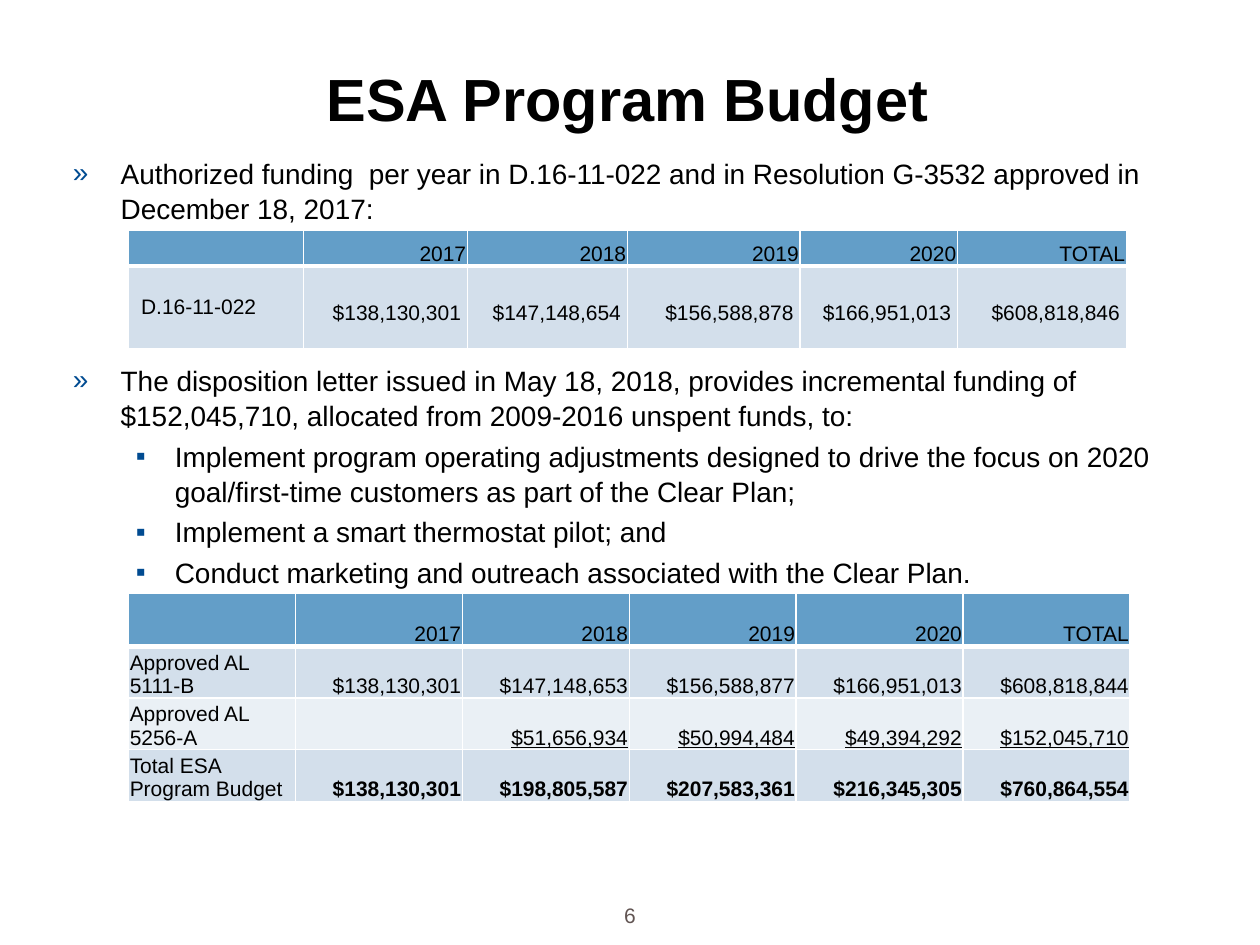
from lxml import etree
from pptx import Presentation
from pptx.dml.color import RGBColor
from pptx.enum.text import MSO_ANCHOR, PP_ALIGN
from pptx.oxml.ns import qn
from pptx.util import Inches, Pt

LEFT, CENTER, RIGHT = PP_ALIGN.LEFT, PP_ALIGN.CENTER, PP_ALIGN.RIGHT
MIDDLE, BOTTOM = MSO_ANCHOR.MIDDLE, MSO_ANCHOR.BOTTOM
TITLE_ONLY = 5
BLACK, WHITE, GRAY, NAVY = "000000", "FFFFFF", "615452", "004B91"
HEADER, BAND, PALE = "639EC8", "D3DFEB", "EAF0F5"

YEARS = ["", "2017", "2018", "2019", "2020", "TOTAL"]
AUTHORIZED = [
    YEARS,
    ["D.16-11-022", "$138,130,301", "$147,148,654", "$156,588,878",
     "$166,951,013", "$608,818,846"],
]
ALLOCATED = [
    YEARS,
    ["Approved AL 5111-B", "$138,130,301", "$147,148,653", "$156,588,877",
     "$166,951,013", "$608,818,844"],
    ["Approved AL 5256-A", "", "$51,656,934", "$50,994,484",
     "$49,394,292", "$152,045,710"],
    ["Total ESA Program Budget", "$138,130,301", "$198,805,587",
     "$207,583,361", "$216,345,305", "$760,864,554"],
]
BULLETS = [
    (0, 0, "Authorized funding  per year in D.16-11-022 and in Resolution "
           "G-3532 approved in December 18, 2017:"),
    (0, 78, "The disposition letter issued in May 18, 2018, provides incremental "
            "funding of $152,045,710, allocated from 2009-2016 unspent funds, to:"),
    (1, 3, "Implement program operating adjustments designed to drive the focus "
           "on 2020 goal/first-time customers as part of the Clear Plan;"),
    (1, 3, "Implement a smart thermostat pilot; and"),
    (1, 3, "Conduct marketing and outreach associated with the Clear Plan."),
]
BULLET_STYLES = [("»", 0.38, 0.38), ("▪", 0.81, 0.31)]


def color(value):
    return RGBColor.from_string(value)


def style(para, size, align=LEFT, fill=BLACK, bold=False, underline=False):
    para.alignment = align
    font = para.font
    font.name, font.size, font.bold = "Arial", Pt(size), bold
    font.underline = underline
    font.color.rgb = color(fill)


def add_bullet(para, symbol, margin, hanging):
    props = para._p.get_or_add_pPr()
    props.set("marL", str(Inches(margin)))
    props.set("indent", str(-Inches(hanging)))
    tint = etree.SubElement(props, qn("a:buClr"))
    etree.SubElement(tint, qn("a:srgbClr"), val=NAVY)
    etree.SubElement(props, qn("a:buFont"), typeface="Arial")
    etree.SubElement(props, qn("a:buChar"), char=symbol)


def place_title(page, box, text):
    title = page.shapes.title
    title.left, title.top, title.width, title.height = map(Inches, box)
    title.text_frame.text = text
    title.text_frame.vertical_anchor = MIDDLE
    style(title.text_frame.paragraphs[0], 34, CENTER, bold=True)


def place_bullets(page, box, bullets):
    frame = page.shapes.add_textbox(*map(Inches, box)).text_frame
    frame.word_wrap = True
    for index, (level, gap, text) in enumerate(bullets):
        para = frame.add_paragraph() if index else frame.paragraphs[0]
        para.text = text
        para.level = level
        para.line_spacing = 1.05
        if gap:
            para.space_before = Pt(gap)
        add_bullet(para, *BULLET_STYLES[level])
        style(para, 16)


def place_page_number(page, box, number):
    frame = page.shapes.add_textbox(*map(Inches, box)).text_frame
    frame.word_wrap = True
    frame.vertical_anchor = MIDDLE
    frame.text = number
    style(frame.paragraphs[0], 12, CENTER, GRAY)


def set_borders(cell, top, bottom):
    props = cell._tc.get_or_add_tcPr()
    for side, points in zip("LRTB", (1, 1, top, bottom)):
        line = etree.SubElement(props, qn(f"a:ln{side}"), w=str(Pt(points)))
        solid = etree.SubElement(line, qn("a:solidFill"))
        etree.SubElement(solid, qn("a:srgbClr"), val=WHITE)


def set_margins(cell, left, right, bottom):
    cell.margin_left, cell.margin_right = Inches(left), Inches(right)
    cell.margin_top, cell.margin_bottom = Inches(0.01), Inches(bottom)


def place_table(page, box, rows, widths, heights):
    table = page.shapes.add_table(len(rows), len(widths), *map(Inches, box)).table
    table.first_row = table.horz_banding = False
    for column, width in zip(table.columns, widths):
        column.width = Inches(width)
    for row, height in zip(table.rows, heights):
        row.height = Inches(height)
    for r, texts in enumerate(rows):
        for c, text in enumerate(texts):
            cell = table.cell(r, c)
            set_borders(cell, 3 if r == 1 else 1, 1 if r else 3)
            cell.fill.solid()
            cell.fill.fore_color.rgb = color((HEADER, BAND, PALE, BAND)[r])
            cell.vertical_anchor = BOTTOM
            set_margins(cell, 0.01, 0.01, 0)
            cell.text = text
            style(cell.text_frame.paragraphs[0], 12, RIGHT if c else LEFT,
                  bold=c > 0 and r == 3, underline=c > 0 and r == 2)
    return table


def place_authorized_table(page, box):
    widths = [1.39, 1.3, 1.27, 1.37, 1.25, 1.34]
    table = place_table(page, box, AUTHORIZED, widths, [0.28, 0.66])
    for c in range(1, len(widths)):
        set_margins(table.cell(1, c), 0.01, 0.05, 0.19)
    label = table.cell(1, 0)
    label.vertical_anchor = MIDDLE
    set_margins(label, 0.1, 0.1, 0.01)


def place_allocated_table(page, box):
    widths = [box[2] / len(YEARS)] * len(YEARS)
    place_table(page, box, ALLOCATED, widths, [0.42] + [0.41] * 3)


def main():
    deck = Presentation()
    deck.slide_width, deck.slide_height = Inches(10), Inches(7.5)
    page = deck.slides.add_slide(deck.slide_layouts[TITLE_ONLY])
    place_title(page, (0.48, 0.15, 9, 1.25), "ESA Program Budget")
    place_bullets(page, (0.48, 1.18, 9.26, 3.5), BULLETS)
    place_page_number(page, (4.53, 7.12, 0.94, 0.29), "6")
    place_allocated_table(page, (1.02, 4.71, 7.95, 1.65))
    place_authorized_table(page, (1.02, 1.83, 7.92, 0.94))
    deck.save("out.pptx")


if __name__ == "__main__":
    main()
